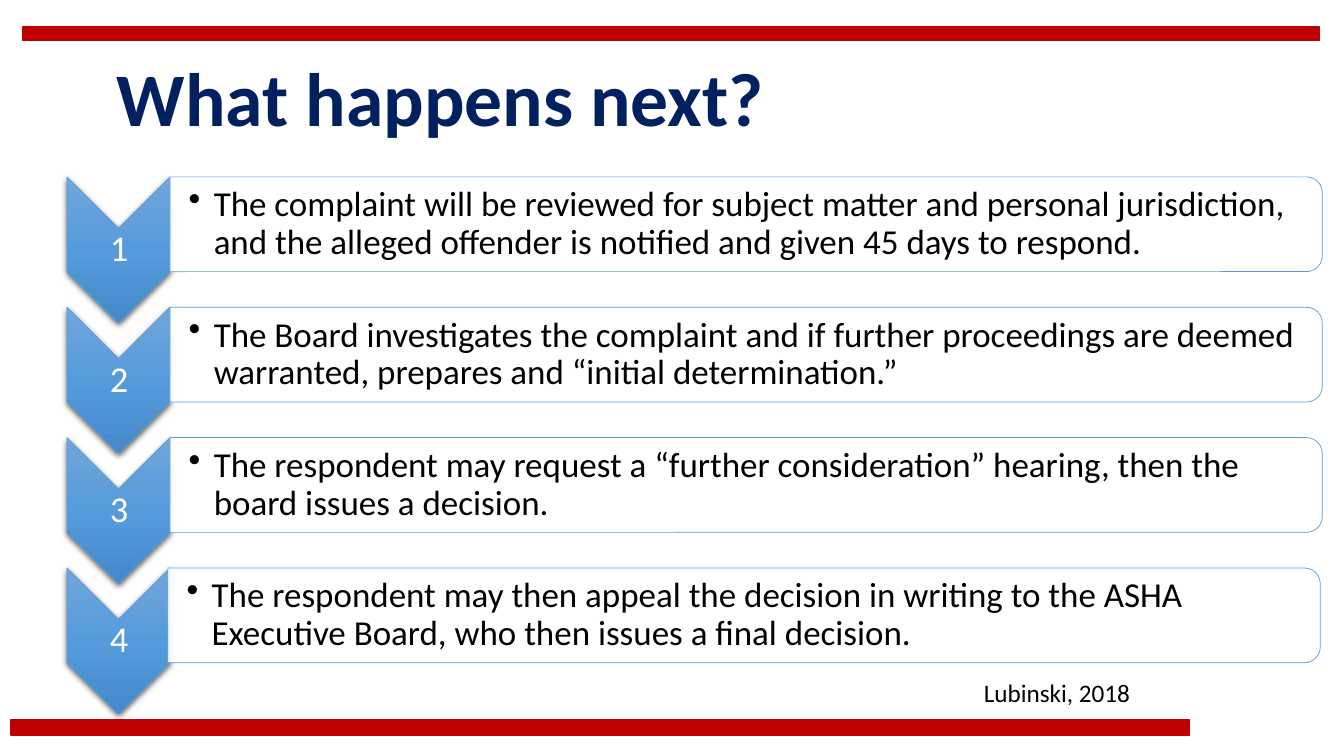
"""Build the slide listing the four steps that follow a complaint."""
from dataclasses import dataclass

from lxml import etree
from pptx import Presentation
from pptx.dml.color import RGBColor
from pptx.enum.shapes import MSO_SHAPE
from pptx.enum.text import MSO_ANCHOR, PP_ALIGN
from pptx.oxml import parse_xml
from pptx.oxml.ns import nsdecls, qn
from pptx.shapes.autoshape import Shape
from pptx.slide import Slide
from pptx.util import Inches, Pt

RECT = MSO_SHAPE.RECTANGLE
CHEVRON = MSO_SHAPE.CHEVRON
ROUND = MSO_SHAPE.ROUND_2_SAME_RECTANGLE
MIDDLE = MSO_ANCHOR.MIDDLE
TOP = MSO_ANCHOR.TOP
CENTER = PP_ALIGN.CENTER
LEFT = PP_ALIGN.LEFT

FONT = "Calibri"
COLORS = {
    "red": "C00000",
    "navy": "002060",
    "blue": "5B9BD5",
    "white": "FFFFFF",
    "black": "000000",
}
STOPS = ((0, "71A6DB"), (50, "559BDB"), (100, "448ACA"))
PITCH = 3.88 / 3


@dataclass
class Box:
    left: float
    top: float
    width: float
    height: float


@dataclass
class Label:
    text: str
    size: float
    color: str = "black"
    bold: bool = False
    align: PP_ALIGN = LEFT
    anchor: MSO_ANCHOR = MIDDLE
    spacing: float = 0.9
    inset: float = 0.1
    edge: float = 0.05
    bullet: bool = False


@dataclass
class Step:
    text: str
    shift: float = 0


BANDS = (Box(0.11, 7.14, 11.69, 0.15), Box(0.23, 0.27, 12.86, 0.13))
STEPS = (
    Step("The complaint will be reviewed for subject matter and personal jurisdiction, "
         "and the alleged offender is notified and given 45 days to respond."),
    Step("The Board investigates the complaint and if further proceedings are deemed "
         "warranted, prepares and “initial determination.”"),
    Step("The respondent may request a “further consideration” hearing, "
         "then the board issues a decision."),
    Step("The respondent may then appeal the decision in writing to the ASHA "
         "Executive Board, who then issues a final decision.", -0.02),
)


def tint(name: str) -> RGBColor:
    return RGBColor.from_string(COLORS[name])


def add_form(slide: Slide, kind: MSO_SHAPE, box: Box, fill: str, line: str,
             weight: float, turn: float = 0) -> Shape:
    form = slide.shapes.add_shape(kind, Inches(box.left), Inches(box.top),
                                  Inches(box.width), Inches(box.height))
    form.rotation = turn
    form.shadow.inherit = False
    form.fill.solid()
    form.fill.fore_color.rgb = tint(fill)
    form.line.color.rgb = tint(line)
    form.line.width = Pt(weight)
    return form


def add_label(slide: Slide, box: Box, label: Label) -> None:
    frame = slide.shapes.add_textbox(Inches(box.left), Inches(box.top),
                                     Inches(box.width), Inches(box.height)).text_frame
    frame.word_wrap = True
    frame.vertical_anchor = label.anchor
    frame.margin_left = Inches(label.inset)
    frame.margin_right = Inches(min(label.inset, 0.1) if label.edge > 0.02 else 0.02)
    frame.margin_top = frame.margin_bottom = Inches(label.edge)
    para = frame.paragraphs[0]
    para.text = label.text
    para.alignment = label.align
    para.line_spacing = label.spacing
    if label.bullet:
        props = para._p.get_or_add_pPr()
        props.set("marL", str(Inches(0.25)))
        props.set("indent", str(Inches(-0.25)))
        etree.SubElement(props, qn("a:buChar"), char="•")
    para.font.name = FONT
    para.font.size = Pt(label.size)
    para.font.bold = label.bold
    para.font.color.rgb = tint(label.color)


def shade(form: Shape) -> None:
    form.fill.gradient()
    form.fill.gradient_angle = 270
    grad = form._element.spPr.find(qn("a:gradFill"))
    grad.set("rotWithShape", "0")
    stops = grad.find(qn("a:gsLst"))
    for stop in list(stops):
        stops.remove(stop)
    for place, color in STOPS:
        stop = etree.SubElement(stops, qn("a:gs"), pos=str(place * 1000))
        etree.SubElement(stop, qn("a:srgbClr"), val=color)
    form._element.spPr.find(qn("a:effectLst")).append(parse_xml(
        f'<a:outerShdw {nsdecls("a")} blurRad="{Pt(4.5)}" dist="{Pt(1.5)}" '
        f'dir="5400000" algn="ctr" rotWithShape="0"><a:srgbClr val="{COLORS["black"]}">'
        '<a:alpha val="63000"/></a:srgbClr></a:outerShdw>'))


def add_step(slide: Slide, index: int, step: Step) -> None:
    drop = index * PITCH
    arrow = add_form(slide, CHEVRON, Box(0.45, 1.97 + drop, 1.45, 1.02),
                     "blue", "blue", 0.5, 90)
    shade(arrow)
    add_label(slide, Box(0.67, 2.26 + drop, 1.02, 0.44),
              Label(str(index + 1), 26, "white", align=CENTER, inset=0.02, edge=0.02))
    panel = add_form(slide, ROUND, Box(6.93 + step.shift, -3.49 + drop, 0.94, 11.43),
                     "white", "blue", 0.5, 90)
    color = panel._element.spPr.find(qn("a:solidFill"))[0]
    etree.SubElement(color, qn("a:alpha"), val="90000")
    add_label(slide, Box(1.68 + step.shift, 1.8 + drop, 11.38, 0.85),
              Label(step.text, 25, inset=0.19, edge=0.02, bullet=True))


def main() -> None:
    deck = Presentation()
    deck.slide_width = Inches(13.33)
    deck.slide_height = Inches(7.5)
    slide = deck.slides.add_slide(deck.slide_layouts[6])
    for band in BANDS:
        add_form(slide, RECT, band, "red", "red", 1)
    add_label(slide, Box(1.06, 0.39, 12, 1.25),
              Label("What happens next?", 54, "navy", bold=True))
    for index, step in enumerate(STEPS):
        add_step(slide, index, step)
    add_label(slide, Box(9.66, 6.67, 2.12, 0.4),
              Label("Lubinski, 2018", 18, anchor=TOP, spacing=1.0))
    deck.save("out.pptx")


if __name__ == "__main__":
    main()
